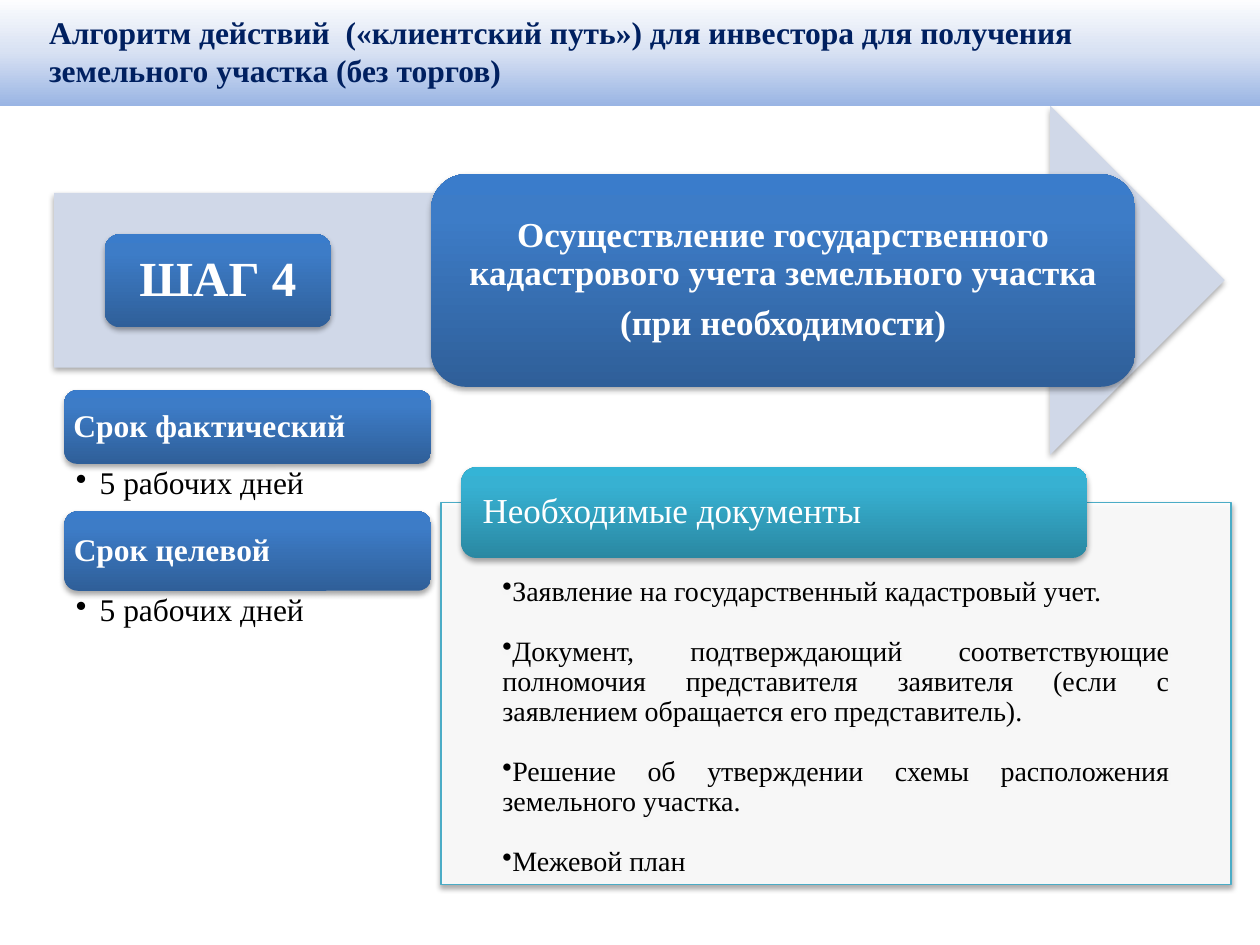
from lxml import etree
from pptx import Presentation
from pptx.dml.color import RGBColor
from pptx.enum.shapes import MSO_SHAPE
from pptx.enum.text import MSO_ANCHOR, PP_ALIGN
from pptx.oxml.ns import qn
from pptx.util import Cm, Pt

RECT, ROUND, ARROW = MSO_SHAPE.RECTANGLE, MSO_SHAPE.ROUNDED_RECTANGLE, MSO_SHAPE.RIGHT_ARROW
LEFT, CENTER, JUSTIFY = PP_ALIGN.LEFT, PP_ALIGN.CENTER, PP_ALIGN.JUSTIFY
TOP, MIDDLE = MSO_ANCHOR.TOP, MSO_ANCHOR.MIDDLE
BLUE = [(0, "2F5F99"), (80, "3D7CC7"), (100, "3A7CCB")]
TEAL = [(0, "2A88A2"), (80, "37B1D2"), (100, "34B4D6")]
SKY = [(0, "9AB5E4"), (50, "D9E2F3"), (100, "FFFFFF")]


def rgb(value):
    return RGBColor.from_string(value)


def sub(parent, tag, **attrs):
    return etree.SubElement(parent, qn(tag), {k: str(v) for k, v in attrs.items()})


def write(tf, text, size=18, color="FFFFFF", bold=False, align=LEFT, anchor=MIDDLE,
          inset=(0.2, 0.2, 0.2, 0.2), spacing=0.9, after=0, indent=None, hanging=0, bullet=False):
    tf.word_wrap = True
    tf.vertical_anchor = anchor
    tf.margin_left, tf.margin_top, tf.margin_right, tf.margin_bottom = map(Cm, inset)
    for i, line in enumerate(text.split("\n")):
        p = tf.add_paragraph() if i else tf.paragraphs[0]
        p.text = line
        p.alignment, p.line_spacing, p.space_after = align, spacing, Pt(after)
        pPr = p._p.get_or_add_pPr()
        if indent is not None:
            pPr.set("marL", str(Cm(indent)))
            pPr.set("indent", str(-Cm(hanging)))
        if bullet:
            sub(pPr, "a:buChar", char="•")
        for r in p.runs:
            r.font.name, r.font.size, r.font.bold = "Times New Roman", Pt(size), bold
            r.font.color.rgb = rgb(color)


class Deck:
    """Holds the style and the current slide."""

    def __init__(self):
        self.prs = Presentation()
        self.prs.slide_width, self.prs.slide_height = Cm(25.4), Cm(19.05)
        self.s = self.prs.slides.add_slide(self.prs.slide_layouts[6])

    def shape(self, kind, box, fill, text="", alpha=None, line=None, shadow=True, **fmt):
        sp = self.s.shapes.add_shape(kind, *map(Cm, box))
        sp.shadow.inherit = False
        if isinstance(fill, str):
            sp.fill.solid()
            sp.fill.fore_color.rgb = rgb(fill)
            if alpha:
                sub(sp._element.spPr.find(".//" + qn("a:srgbClr")), "a:alpha", val=alpha * 1000)
        else:
            self.gradient(sp, fill)
        if line:
            sp.line.color.rgb, sp.line.width = rgb(line), Pt(0.75)
        else:
            sp.line.fill.background()
        if shadow:
            self.shadow(sp)
        if text:
            write(sp.text_frame, text, **fmt)

    def gradient(self, sp, stops):
        sp.fill.gradient()
        sp.fill.gradient_angle = 90
        gs_lst = sp._element.spPr.find(".//" + qn("a:gsLst"))
        for gs in list(gs_lst):
            gs_lst.remove(gs)
        for pos, color in stops:
            sub(sub(gs_lst, "a:gs", pos=pos * 1000), "a:srgbClr", val=color)

    def shadow(self, sp):
        effects = sp._element.spPr.find(qn("a:effectLst"))
        outer = sub(effects, "a:outerShdw", blurRad=Pt(3.15), dist=Pt(1.8), dir=5400000, rotWithShape=0)
        sub(sub(outer, "a:srgbClr", val="000000"), "a:alpha", val=35000)

    def text(self, box, text, **fmt):
        write(self.s.shapes.add_textbox(*map(Cm, box)).text_frame, text, **fmt)


def main():
    deck = Deck()
    deck.shape(ARROW, (1.09, 2.13, 23.6, 7.04), "D0D8E8")
    deck.shape(ROUND, (2.11, 4.72, 4.57, 1.88), BLUE, "ШАГ 4", size=28, bold=True, align=CENTER)
    deck.shape(ROUND, (8.69, 3.51, 14.2, 4.29), BLUE,
               "Осуществление государственного кадастрового учета земельного участка\n"
               "(при необходимости)", size=20, bold=True, align=CENTER, after=7)

    terms = [("Срок фактический", 7.87, 1.48), ("Срок целевой", 10.31, 1.6)]
    for name, top, height in terms:
        deck.shape(ROUND, (1.3, top, 7.39, height), BLUE, name, bold=True,
                   inset=(0.11, 0.11, 0.11, 0.11))
        deck.text((1.3, top + height, 7.39, 0.96), "5 рабочих дней", color="000000", anchor=TOP,
                  inset=(0.23, 0.08, 0.36, 0.08), indent=0.48, hanging=0.48, bullet=True)

    deck.shape(RECT, (0, -0.08, 25.4, 2.21), SKY,
               "Алгоритм действий  («клиентский путь») для инвестора для получения\v"
               "земельного участка (без торгов)", shadow=False, color="002060", bold=True,
               inset=(0.25, 0.13, 0.25, 0.13), spacing=1.0, indent=0.74)

    documents = [
        "Заявление на государственный кадастровый учет.",
        "Документ, подтверждающий соответствующие полномочия представителя заявителя "
        "(если с заявлением обращается его представитель).",
        "Решение об утверждении схемы расположения земельного участка.",
        "Межевой план",
    ]
    deck.shape(RECT, (8.89, 10.13, 15.93, 7.7), "FFFFFF", "\n".join(documents), alpha=90,
               line="4BACC6", size=16, color="000000", align=JUSTIFY, anchor=TOP,
               inset=(1.24, 1.5, 1.24, 0.3), after=17, indent=0, hanging=0.48, bullet=True)
    deck.shape(ROUND, (9.3, 9.42, 12.62, 1.83), TEAL, "Необходимые документы", size=20,
               inset=(0.34, 0, 0.34, 0))
    deck.prs.save("out.pptx")


if __name__ == "__main__":
    main()
